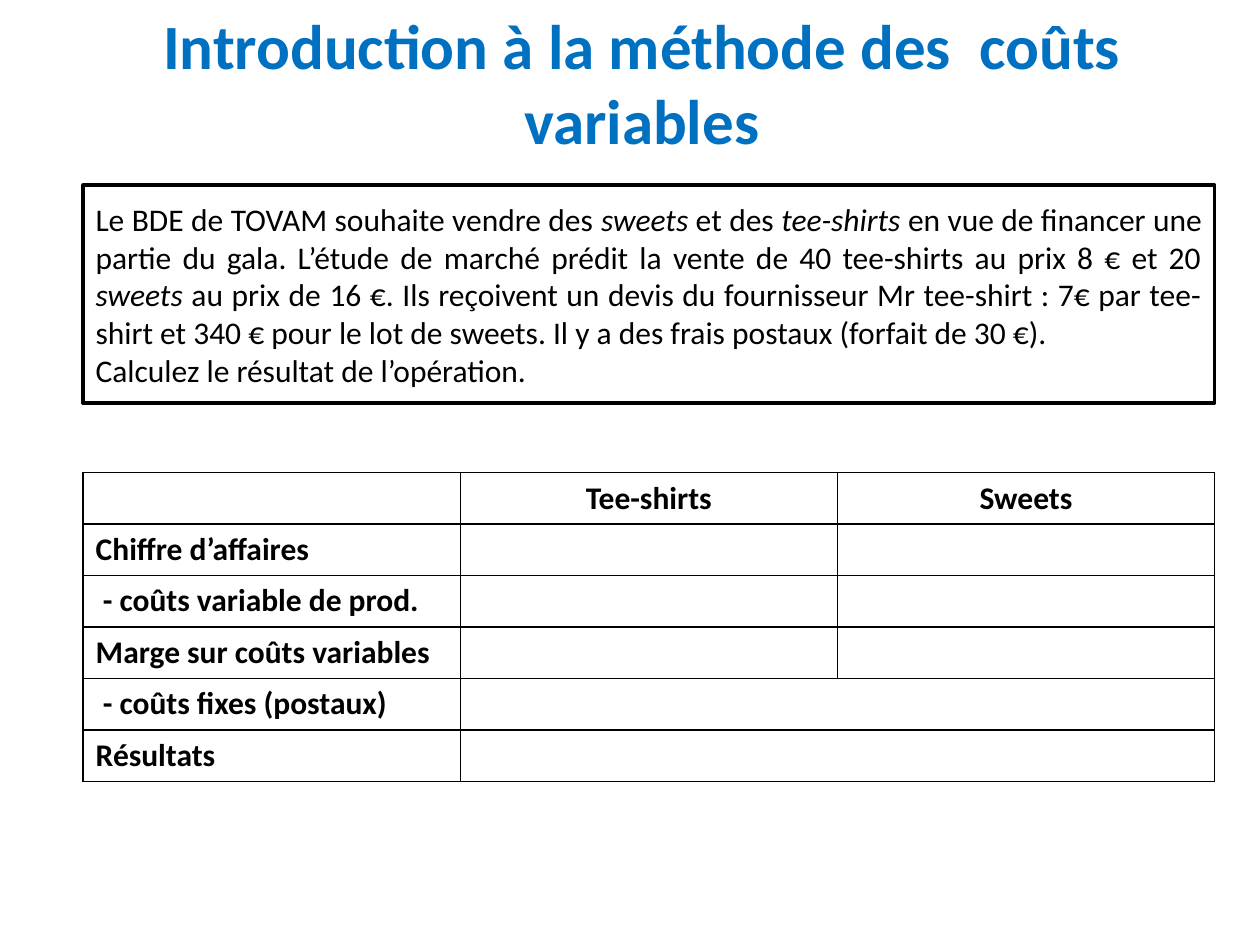
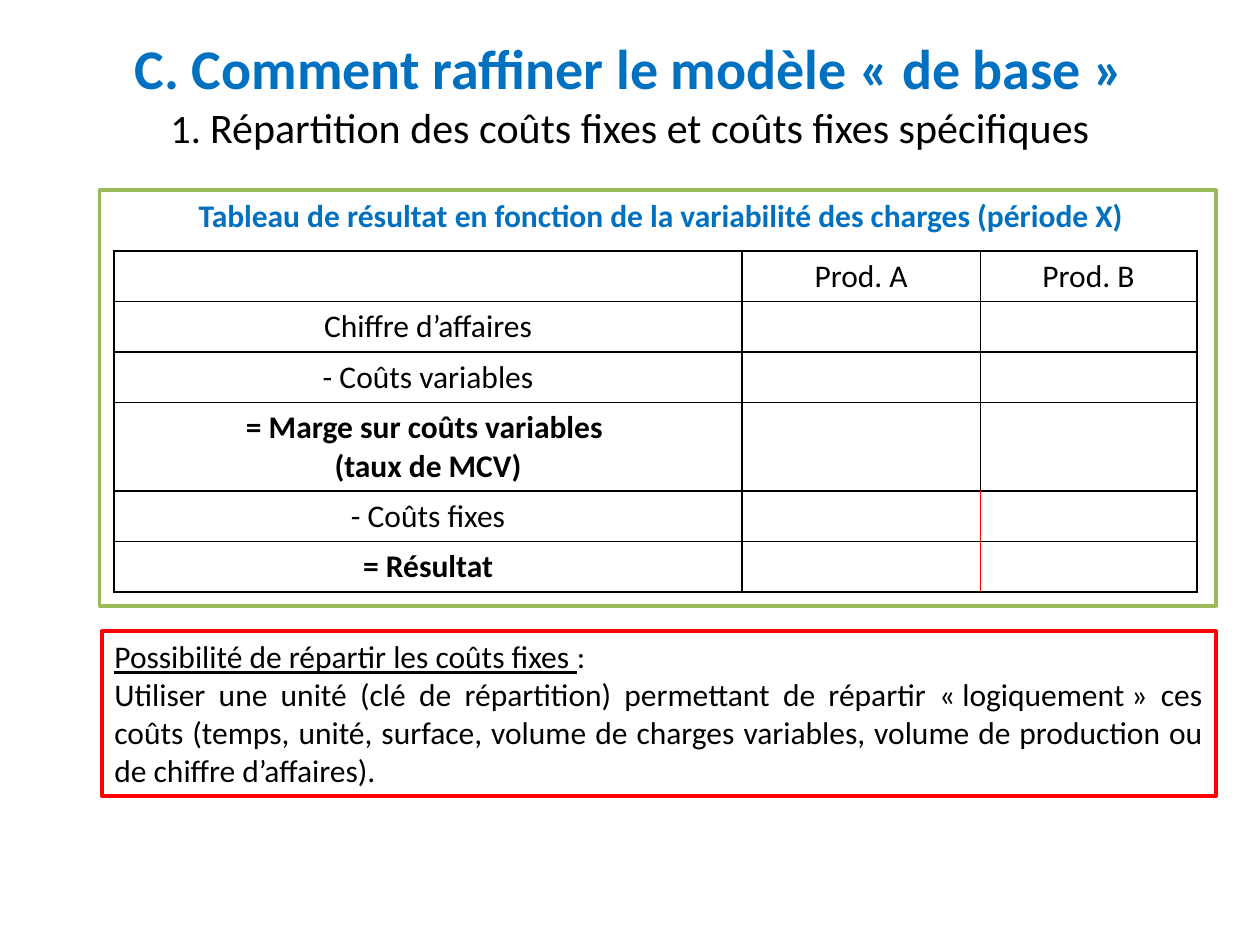
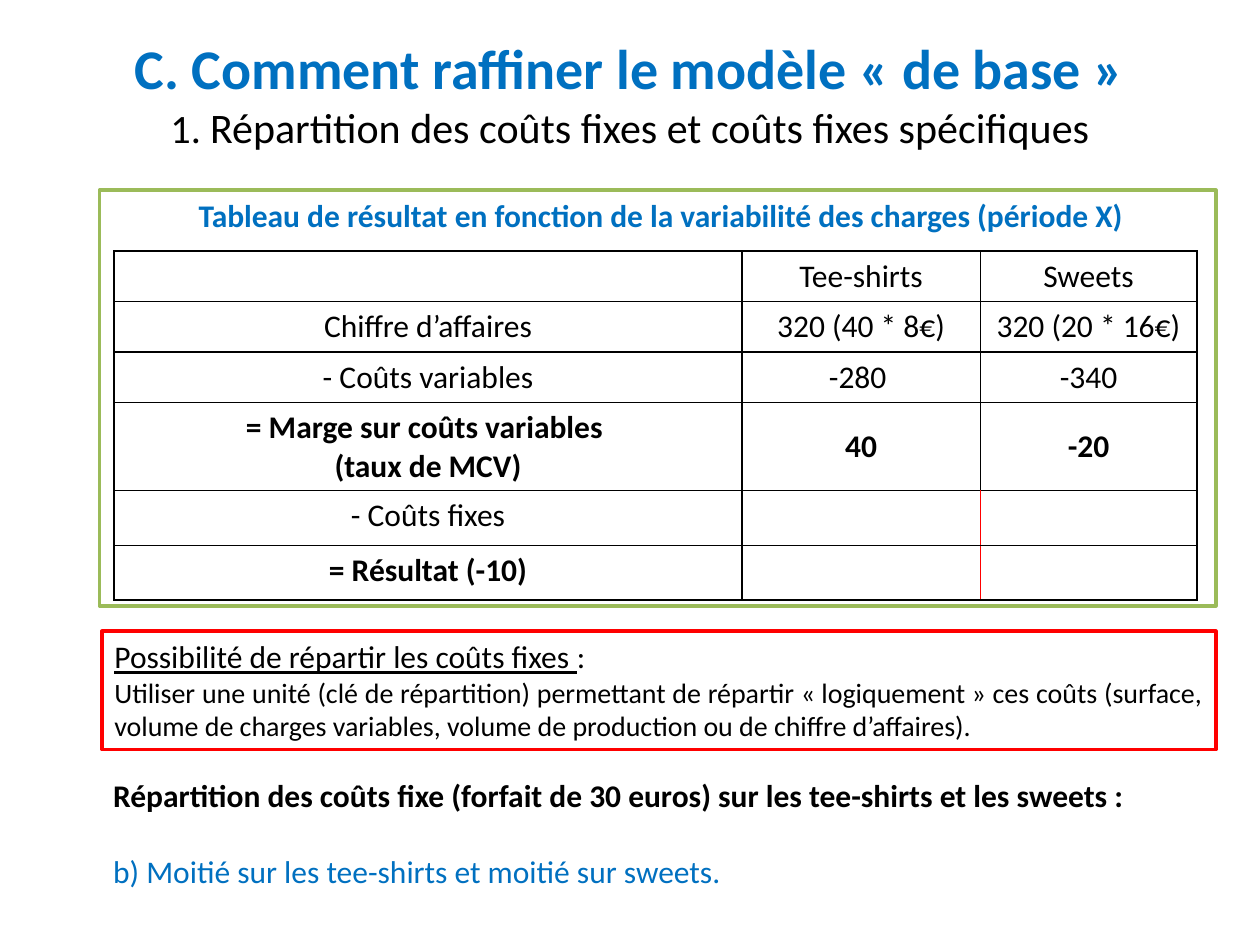
from dataclasses import dataclass

from lxml import etree
from pptx import Presentation
from pptx.dml.color import RGBColor
from pptx.enum.shapes import MSO_SHAPE
from pptx.enum.text import MSO_ANCHOR, PP_ALIGN
from pptx.oxml.ns import qn
from pptx.util import Inches, Pt

SLIDE_WIDTH, SLIDE_HEIGHT = Inches(10), Inches(7.5)
RECTANGLE = MSO_SHAPE.RECTANGLE
TOP, MIDDLE, BOTTOM = MSO_ANCHOR.TOP, MSO_ANCHOR.MIDDLE, MSO_ANCHOR.BOTTOM
LEFT, CENTER, JUSTIFY = PP_ALIGN.LEFT, PP_ALIGN.CENTER, PP_ALIGN.JUSTIFY

FONT = "Calibri"
BLACK, WHITE, BLUE = "000000", "FFFFFF", "0070C0"
GREEN, RED = "9BBB59", "FF0000"
HANGING_INDENT = Inches(0.5)
DEFAULT_MARGINS = (0.1, 0.05, 0.1, 0.05)
NO_BREAK_SPACE = chr(160)


@dataclass
class Box:
    """An area of the slide, in EMU."""
    left: int
    top: int
    width: int
    height: int

    def inside(self, left, top, width, height):
        """Return the area given in percent of this one."""
        return Box(
            self.left + int(self.width * left / 100),
            self.top + int(self.height * top / 100),
            int(self.width * width / 100),
            int(self.height * height / 100),
        )

    def place(self):
        return self.left, self.top, self.width, self.height


SLIDE_BOX = Box(0, 0, SLIDE_WIDTH, SLIDE_HEIGHT)


# Shared helpers

def color(hex_string):
    return RGBColor.from_string(hex_string)


def quoted(text):
    return f"«{NO_BREAK_SPACE}{text}{NO_BREAK_SPACE}»"


def write(text_frame, paragraphs, align=LEFT, hanging=False, space_before=0, **text_format):
    """Fill a frame; a paragraph is a string or a list of (text, format) runs."""
    text_frame.word_wrap = True
    for index, content in enumerate(paragraphs):
        paragraph = text_frame.paragraphs[0] if index == 0 else text_frame.add_paragraph()
        paragraph.alignment = align
        if index and space_before:
            paragraph.space_before = Pt(space_before)
        if hanging:
            properties = paragraph._p.get_or_add_pPr()
            properties.set("marL", str(HANGING_INDENT))
            properties.set("indent", str(-HANGING_INDENT))
        runs = [(content, {})] if isinstance(content, str) else content
        for text, changes in runs:
            settings = {"size": 18, "color": BLACK, "bold": False, **text_format, **changes}
            run = paragraph.add_run()
            run.text = text
            run.font.name = FONT
            run.font.size = Pt(settings["size"])
            run.font.color.rgb = color(settings["color"])
            run.font.bold = settings["bold"]
            run.font.italic = settings.get("italic", False)
            run.font.underline = settings.get("underline", False)


def set_frame(text_frame, anchor, margins=DEFAULT_MARGINS):
    text_frame.vertical_anchor = anchor
    (text_frame.margin_left, text_frame.margin_top,
     text_frame.margin_right, text_frame.margin_bottom) = map(Inches, margins)


def add_text(slide, box, paragraphs, anchor=TOP, margins=DEFAULT_MARGINS, **text_format):
    shape = slide.shapes.add_textbox(*box.place())
    set_frame(shape.text_frame, anchor, margins)
    write(shape.text_frame, paragraphs, **text_format)


def add_framed_text(slide, box, line_color, paragraphs, anchor=TOP, **text_format):
    shape = slide.shapes.add_shape(RECTANGLE, *box.place())
    shape.shadow.inherit = False
    shape.fill.solid()
    shape.fill.fore_color.rgb = color(WHITE)
    shape.line.color.rgb = color(line_color)
    shape.line.width = Pt(2)
    set_frame(shape.text_frame, anchor)
    write(shape.text_frame, paragraphs, **text_format)


def set_borders(cell, **side_colors):
    """Draw the four sides in black, except those given a colour (L, R, T, B)."""
    properties = cell._tc.get_or_add_tcPr()
    for side in "LRTB":
        line = etree.SubElement(properties, qn(f"a:ln{side}"), w=str(Pt(1)))
        fill = etree.SubElement(line, qn("a:solidFill"))
        etree.SubElement(fill, qn("a:srgbClr"), val=side_colors.get(side, BLACK))


def add_grid(slide, box, rows, column_weights, row_weights, red_rows=()):
    """Add a table; each row is (texts, alignment, bold)."""
    frame = slide.shapes.add_table(len(rows), len(column_weights), *box.place())
    table = frame.table
    table.first_row = table.horz_banding = False
    for column, weight in zip(table.columns, column_weights):
        column.width = int(box.width * weight / sum(column_weights))
    for row, weight in zip(table.rows, row_weights):
        row.height = int(box.height * weight / sum(row_weights))
    for row_index, (texts, align, bold) in enumerate(rows):
        sides = {1: {"R": RED}, 2: {"L": RED}} if row_index in red_rows else {}
        for column_index, text in enumerate(texts):
            cell = table.cell(row_index, column_index)
            set_borders(cell, **sides.get(column_index, {}))
            cell.fill.background()
            if text:
                cell.vertical_anchor = MIDDLE if column_index else TOP
                write(cell.text_frame, text.split("\n"), align=align, bold=bold)
    return table


# Regions

def add_section_title(slide, box):
    add_text(slide, box, [
        [(f"C. Comment raffiner le modèle {quoted('de base')}",
          {"size": 32, "color": BLUE, "bold": True})],
        [("1. ", {"size": 23}),
         ("Répartition des coûts fixes et coûts fixes spécifiques", {})],
    ], align=CENTER, hanging=True, size=24)


def add_result_panel(slide, box, products, sales, variable_costs, margins,
                     result_label, table_share, last_row_weight):
    add_framed_text(
        slide, box, GREEN,
        [" Tableau de résultat en fonction de la variabilité des charges (période X)"],
        align=CENTER, bold=True, color=BLUE)
    rows = [
        (["", *products], CENTER, False),
        (["Chiffre d’affaires", *sales], CENTER, False),
        (["- Coûts variables", *variable_costs], CENTER, False),
        (["= Marge sur coûts variables \n(taux de MCV)", *margins], CENTER, True),
        (["- Coûts fixes", "", ""], CENTER, False),
        ([result_label, "", ""], CENTER, True),
    ]
    add_grid(slide, box.inside(1.3, 14.6, 97, table_share), rows, (58, 22, 20),
             (4, 4, 4, 7, last_row_weight, last_row_weight), red_rows=(4, 5))


def add_allocation_note(slide, box, criteria, size=18):
    explanation = (f"Utiliser une unité (clé de répartition) permettant de répartir "
                   f"{quoted('logiquement')} ces coûts ({criteria}, volume de charges "
                   f"variables, volume de production ou de chiffre d’affaires).")
    add_framed_text(slide, box, RED, [
        [("Possibilité de répartir les coûts fixes ", {"underline": True}), (": ", {})],
        [(explanation, {"size": size})],
    ], align=JUSTIFY)


def add_allocation_choice(slide, box):
    add_text(slide, box, [
        [("Répartition des coûts fixe (forfait de 30 euros) sur les tee-shirts "
          "et les sweets :", {"bold": True})],
        [("b) Moitié sur les tee-shirts et moitié sur sweets.", {"color": BLUE})],
    ], space_before=22)


# Slides

def build_introduction(slide, box):
    add_text(slide, box.inside(7.5, 0, 86.9, 16.67),
             ["Introduction à la méthode des  coûts variables"],
             anchor=BOTTOM, margins=(0, 0.05, 0, 0), align=CENTER,
             size=36, bold=True, color=BLUE)

    # Exercise statement
    italic = {"italic": True}
    add_framed_text(slide, box.inside(6.6, 19.6, 89.8, 23.07), BLACK, [
        [("Le BDE de TOVAM souhaite vendre des ", {}), ("sweets", italic),
         (" et des ", {}), ("tee-shirts", italic),
         (" en vue de financer une partie du gala. L’étude de marché prédit la vente "
          "de 40 tee-shirts au prix 8 € et 20 ", {}), ("sweets", italic),
         (" au prix de 16 €. Ils reçoivent un devis du fournisseur Mr tee-shirt : "
          "7€ par tee-shirt et 340 € pour le lot de sweets. Il y a des frais postaux "
          "(forfait de 30 €). ", {})],
        "Calculez le résultat de l’opération.",
    ], anchor=MIDDLE, align=JUSTIFY)

    # Table to fill in
    labels = ["Chiffre d’affaires", " - coûts variable de prod.", "Marge sur coûts variables",
              " - coûts fixes (postaux)", "Résultats"]
    rows = [(["", "Tee-shirts", "Sweets"], CENTER, True)]
    rows += [([label, "", ""], LEFT, True) for label in labels]
    table = add_grid(slide, box.inside(6.6, 50, 89.8, 32.7), rows, [1] * 3, [1] * 6)
    for row_index in (4, 5):
        table.cell(row_index, 1).merge(table.cell(row_index, 2))


def build_cost_allocation(slide, box, panel, note_height, criteria, note_size=18):
    add_result_panel(slide, box.inside(7.9, 20.13, 88.6, 44), **panel)
    add_section_title(slide, box.inside(5, 2.93, 90, 16.67))
    add_allocation_note(slide, box.inside(8.1, 66.8, 88.4, note_height),
                        criteria, note_size)


def main():
    presentation = Presentation()
    presentation.slide_width, presentation.slide_height = SLIDE_WIDTH, SLIDE_HEIGHT
    blank_layout = presentation.slide_layouts[6]
    introduction, general_case, worked_case = (
        presentation.slides.add_slide(blank_layout) for _ in range(3))

    build_introduction(introduction, SLIDE_BOX)

    empty = ("", "")
    build_cost_allocation(
        general_case, SLIDE_BOX,
        dict(products=("Prod. A", "Prod. B"), sales=empty, variable_costs=empty,
             margins=empty, result_label="= Résultat", table_share=82, last_row_weight=4),
        note_height=17.47, criteria="temps, unité, surface")

    build_cost_allocation(
        worked_case, SLIDE_BOX,
        dict(products=("Tee-shirts", "Sweets"), sales=("320 (40 * 8€)", "320 (20 * 16€)"),
             variable_costs=("-280 ", "-340"), margins=("40", "-20"),
             result_label="= Résultat (-10)", table_share=84, last_row_weight=4.35),
        note_height=12.53, criteria="surface", note_size=16)
    add_allocation_choice(worked_case, SLIDE_BOX.inside(8, 81.47, 88.6, 13.47))

    presentation.save("out.pptx")


if __name__ == "__main__":
    main()
